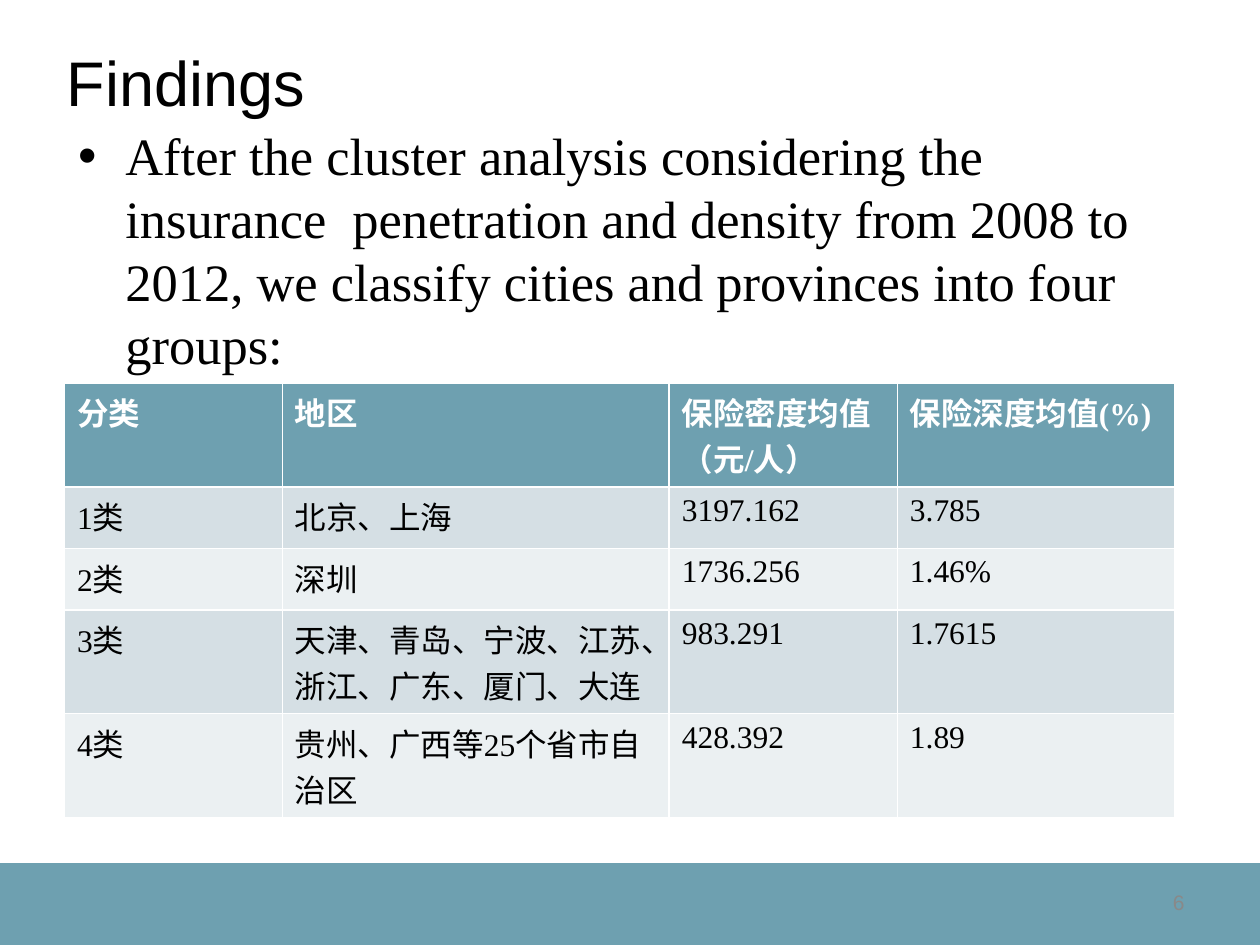
from pptx import Presentation
from pptx import util as u
from pptx.dml.color import RGBColor
from pptx.enum import shapes, text

TEAL = RGBColor(0x6E, 0xA0, 0xB0)
BAND_DARK = RGBColor(0xD5, 0xDF, 0xE4)
BAND_LIGHT = RGBColor(0xEB, 0xF0, 0xF2)
WHITE = RGBColor(0xFF, 0xFF, 0xFF)
BLACK = RGBColor(0, 0, 0)
GREY = RGBColor(0x89, 0x89, 0x89)

GROUPS = [
    ("分类", "地区", "保险密度均值（元/人）", "保险深度均值(%)"),
    ("1类", "北京、上海", "3197.162", "3.785"),
    ("2类", "深圳", "1736.256", "1.46%"),
    ("3类", "天津、青岛、宁波、江苏、浙江、广东、厦门、大连", "983.291", "1.7615"),
    ("4类", "贵州、广西等25个省市自治区", "428.392", "1.89"),
]


class FindingsSlide:
    heading_font = "Arial"
    body_font = "Times New Roman"

    def __init__(self, deck):
        self.slide = deck.slides.add_slide(deck.slide_layouts[1])

    def set_text(self, frame, words, font, size, color, bold=False):
        frame.text = words
        paragraph = frame.paragraphs[0]
        paragraph.font.name = font
        paragraph.font.size = u.Pt(size)
        paragraph.font.color.rgb = color
        paragraph.font.bold = bold
        return paragraph

    def place(self, holder, left, top, width, height):
        holder.left, holder.top = u.Cm(left), u.Cm(top)
        holder.width, holder.height = u.Cm(width), u.Cm(height)
        holder.text_frame.auto_size = text.MSO_AUTO_SIZE.NONE

    def title(self, words, *box):
        holder = self.slide.shapes.title
        self.place(holder, *box)
        heading = self.set_text(holder.text_frame, words, self.heading_font, 36, BLACK)
        heading.alignment = text.PP_ALIGN.LEFT

    def body(self, words, *box):
        holder = self.slide.placeholders[1]
        self.place(holder, *box)
        point = self.set_text(holder.text_frame, words, self.body_font, 30, BLACK)
        point.line_spacing = u.Pt(36)

    def bar(self, *box):
        band = self.slide.shapes.add_shape(
            shapes.MSO_SHAPE.RECTANGLE, *map(u.Cm, box))
        band.shadow.inherit = False
        band.fill.solid()
        band.fill.fore_color.rgb = TEAL
        band.line.fill.background()

    def page_number(self, number, *box):
        label = self.slide.shapes.add_textbox(*map(u.Cm, box))
        label.text_frame.word_wrap = True
        label.text_frame.vertical_anchor = text.MSO_ANCHOR.MIDDLE
        page = self.set_text(label.text_frame, number, self.heading_font, 12, GREY)
        page.alignment = text.PP_ALIGN.RIGHT

    def table(self, rows, left, top, widths, row_height):
        """Fill a table with a header row and alternating bands below it."""
        grid = self.slide.shapes.add_table(
            len(rows), len(widths), u.Cm(left), u.Cm(top),
            u.Cm(sum(widths)), u.Cm(row_height * len(rows))).table
        for column, width in zip(grid.columns, widths):
            column.width = u.Cm(width)
        for r, row in enumerate(rows):
            header = r == 0
            band = TEAL if header else (BAND_LIGHT, BAND_DARK)[r % 2]
            for c, words in enumerate(row):
                cell = grid.cell(r, c)
                cell.fill.solid()
                cell.fill.fore_color.rgb = band
                self.set_text(cell.text_frame, words, self.body_font, 18,
                              WHITE if header else BLACK, header)


def main():
    deck = Presentation()
    deck.slide_width, deck.slide_height = u.Cm(25.4), u.Cm(19.05)
    findings = FindingsSlide(deck)
    findings.bar(-0.2, 17.4, 25.83, 1.65)
    findings.title("Findings", 1.09, 0.74, 22.86, 1.78)
    findings.body(
        "After the cluster analysis considering the insurance  penetration and "
        "density from 2008 to 2012, we classify cities and provinces into four "
        "groups:", 1.32, 2.36, 22.86, 12.57)
    findings.table(GROUPS, 1.3, 7.72, (4.39, 7.8, 4.6, 5.59), 1.24)
    findings.page_number("6", 18.2, 17.68, 5.93, 1.01)
    deck.save("out.pptx")


if __name__ == "__main__":
    main()
